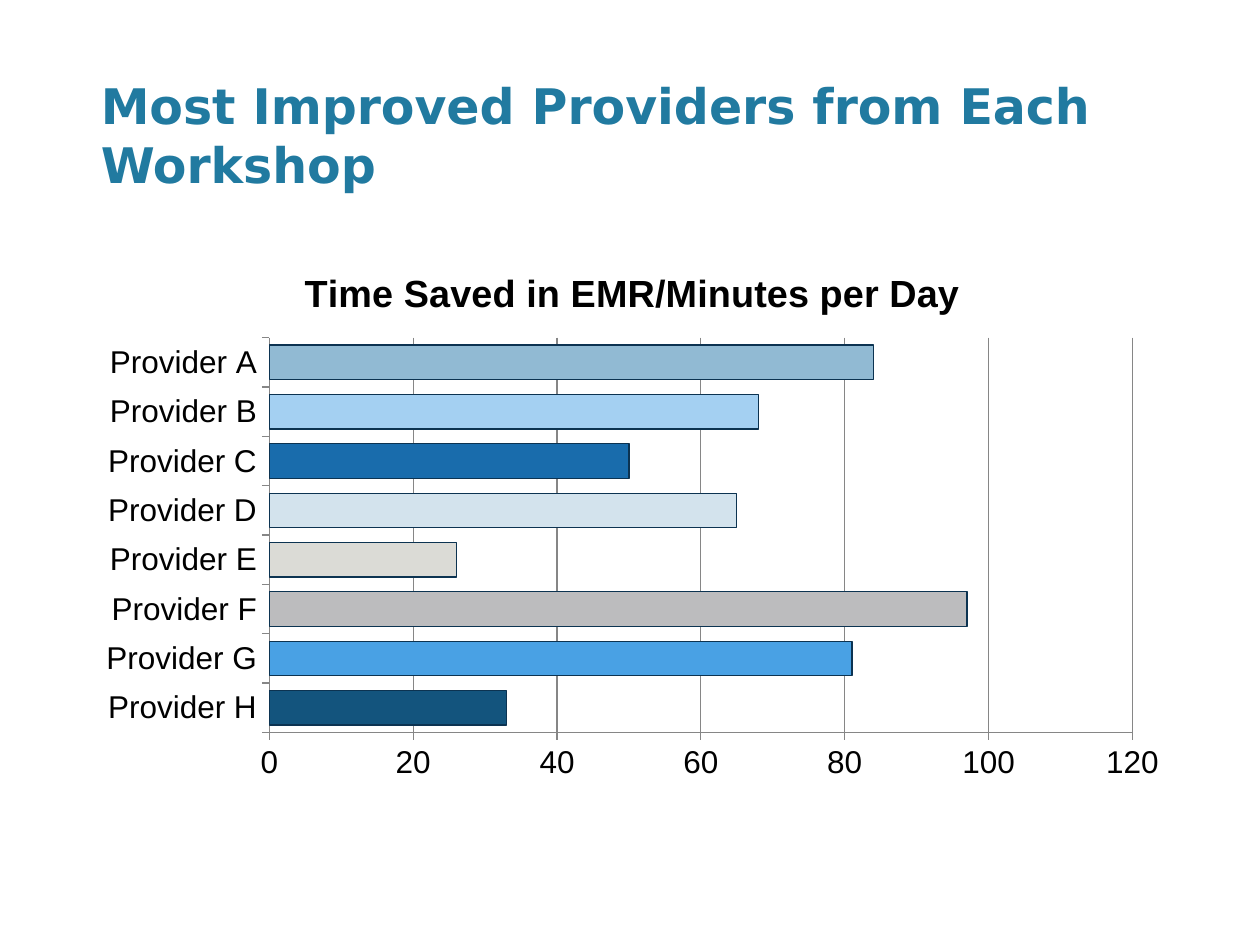
from pptx import Presentation
from pptx.chart.data import CategoryChartData
from pptx.dml.color import RGBColor
from pptx.enum.chart import XL_CHART_TYPE, XL_TICK_MARK
from pptx.enum.text import MSO_ANCHOR
from pptx.util import Inches, Pt

BAR_CLUSTERED = XL_CHART_TYPE.BAR_CLUSTERED
TICK_OUTSIDE = XL_TICK_MARK.OUTSIDE
TICK_NONE = XL_TICK_MARK.NONE
ANCHOR_MIDDLE = MSO_ANCHOR.MIDDLE

COLORS = {
    "title": "217AA0",
    "text": "000000",
    "axis": "868686",
    "outline": "0C3351",
    "Provider H": "13547D",
    "Provider G": "49A1E4",
    "Provider F": "BCBCBE",
    "Provider E": "DBDBD6",
    "Provider D": "D3E3ED",
    "Provider C": "196CAC",
    "Provider B": "A4D0F2",
    "Provider A": "91BAD3",
}
MINUTES_SAVED = {
    "Provider H": 33,
    "Provider G": 81,
    "Provider F": 97,
    "Provider E": 26,
    "Provider D": 65,
    "Provider C": 50,
    "Provider B": 68,
    "Provider A": 84,
}
CHART_TITLE = "Time Saved in EMR/Minutes per Day"


def color(name):
    return RGBColor.from_string(COLORS[name])


def write_text(text, *, frame, font, size, color_name, bold=True):
    run = frame.paragraphs[0].add_run()
    run.text = text
    run.font.name = font
    run.font.size = Pt(size)
    run.font.bold = bold
    run.font.color.rgb = color(color_name)


presentation = Presentation()
presentation.slide_width = Inches(10)
presentation.slide_height = Inches(7.5)
slide = presentation.slides.add_slide(presentation.slide_layouts[6])

title_box = slide.shapes.add_textbox(Inches(0.8), Inches(0.44), Inches(8.7), Inches(1.25))
title_frame = title_box.text_frame
title_frame.word_wrap = True
title_frame.vertical_anchor = ANCHOR_MIDDLE
title_frame.margin_left = 0
write_text("Most Improved Providers from Each Workshop", frame=title_frame,
           font="DejaVu Sans", size=28, color_name="title")

chart_data = CategoryChartData()
chart_data.categories = list(MINUTES_SAVED)
chart_data.add_series(CHART_TITLE, list(MINUTES_SAVED.values()))
chart = slide.shapes.add_chart(
    BAR_CLUSTERED, Inches(0.67), Inches(1.94), Inches(8.7), Inches(4.34), chart_data
).chart
chart.font.name = "Arial"
chart.font.size = Pt(18)
chart.font.color.rgb = color("text")
chart.has_legend = False
chart.has_title = True
write_text(CHART_TITLE, frame=chart.chart_title.text_frame,
           font="Arial", size=21.6, color_name="text")
chart.chart_title.include_in_layout = False

for axis in (chart.category_axis, chart.value_axis):
    axis.major_tick_mark = TICK_OUTSIDE
    axis.minor_tick_mark = TICK_NONE
    axis.format.line.color.rgb = color("axis")
    axis.format.line.width = Pt(0.75)
chart.category_axis.has_major_gridlines = False
value_axis = chart.value_axis
value_axis.minimum_scale = 0
value_axis.maximum_scale = 120
value_axis.major_unit = 20
value_axis.has_major_gridlines = True
value_axis.major_gridlines.format.line.color.rgb = color("axis")
value_axis.major_gridlines.format.line.width = Pt(0.75)

plot = chart.plots[0]
plot.gap_width = 43
plot.overlap = -12
plot.vary_by_categories = False
series = plot.series[0]
for index, provider in enumerate(MINUTES_SAVED):
    bar = series.points[index].format
    bar.fill.solid()
    bar.fill.fore_color.rgb = color(provider)
    bar.line.color.rgb = color("outline")
    bar.line.width = Pt(0.75)

presentation.save("out.pptx")
